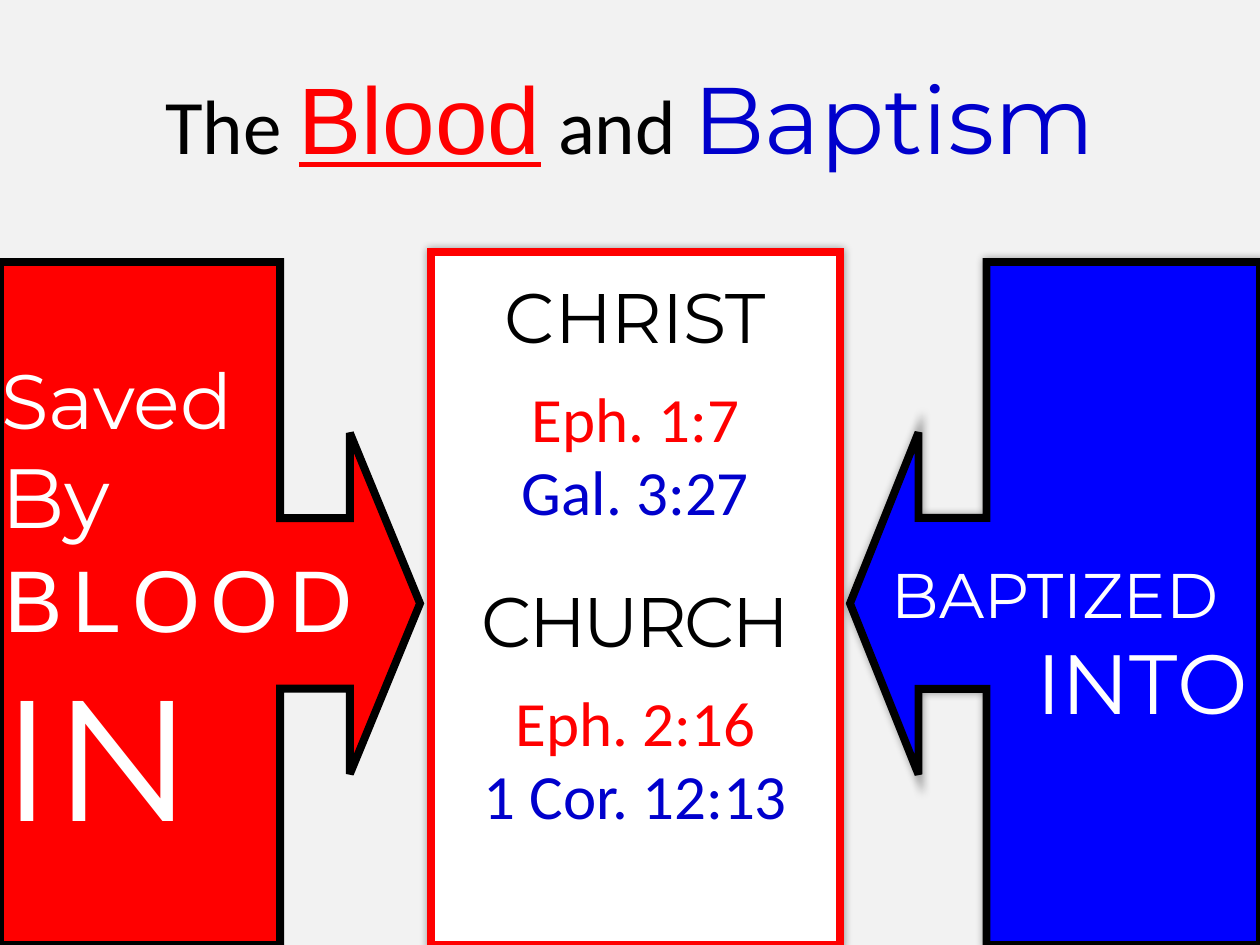
from lxml import etree
from pptx import Presentation
from pptx.dml.color import RGBColor
from pptx.enum.shapes import MSO_SHAPE as Shape
from pptx.enum.text import MSO_ANCHOR as Anchor, MSO_AUTO_SIZE as AutoSize, PP_ALIGN as Align
from pptx.oxml.ns import qn
from pptx.util import Pt

PX = 914400 / 126
COLORS = {
    "paper": "F2F2F2", "white": "FFFFFF", "black": "000000",
    "red": "FF0000", "blue": "0000FF", "navy": "0000CC",
}


def color(name):
    return RGBColor.from_string(COLORS[name])


def emu(*lengths):
    return [round(length * PX) for length in lengths]


def add_panel(shapes, kind, box, fill, line, adjustments=(), shadow=True):
    """A filled shape with a heavy mitred outline and an optional soft glow."""
    panel = shapes.add_shape(kind, *emu(*box))
    for index, value in enumerate(adjustments):
        panel.adjustments[index] = value
    panel.fill.solid()
    panel.fill.fore_color.rgb = color(fill)
    panel.line.color.rgb = color(line)
    panel.line.width = Pt(4.5)
    etree.SubElement(panel.line._get_or_add_ln(), qn("a:miter"), lim="800000")
    panel.shadow.inherit = False
    if shadow:
        effects = panel._element.spPr.find(qn("a:effectLst"))
        outer = etree.SubElement(effects, qn("a:outerShdw"), blurRad=str(Pt(5)),
                                 dist="0", dir="0", rotWithShape="0")
        tint = etree.SubElement(outer, qn("a:srgbClr"), val=COLORS["black"])
        etree.SubElement(tint, qn("a:alpha"), val="40000")


def add_text(shapes, box, paragraphs, anchor=Anchor.TOP, grow=True):
    """Paragraphs are (alignment, spans); a span is (text, size, font, color, extras)."""
    frame = shapes.add_textbox(*emu(*box)).text_frame
    frame.word_wrap = True
    frame.vertical_anchor = anchor
    frame.auto_size = AutoSize.SHAPE_TO_FIT_TEXT if grow else AutoSize.NONE
    for index, (alignment, spans) in enumerate(paragraphs):
        para = frame.add_paragraph() if index else frame.paragraphs[0]
        para.alignment = alignment
        for text, size, font, tone, *extras in spans:
            span = para.add_run()
            span.text = text
            span.font.size = Pt(size)
            span.font.name = font
            span.font.color.rgb = color(tone)
            for key, value in (extras[0] if extras else {}).items():
                span._r.get_or_add_rPr().set(key, value)


def add_title(page, box):
    add_text(page.shapes, box, [(Align.CENTER, [
        ("The ", 44, "Calibri", "black"),
        ("Blood", 54, "Arial", "red", {"u": "sng"}),
        (" and ", 44, "Calibri", "black"),
        ("Baptism", 54, "Montserrat", "navy"),
    ])], Anchor.MIDDLE, grow=False)


def add_baptism_arrow(page, left, top, width, height):
    shapes = page.shapes.add_group_shape().shapes
    add_panel(shapes, Shape.LEFT_ARROW_CALLOUT, (left, top, width, height),
              "blue", "black", (0.417, 0.417, 0.167, 0.667))
    add_text(shapes, (left, top + 287, width, 189), [
        (Align.CENTER, [("BAPTIZED", 36, "Montserrat", "white")]),
        (Align.RIGHT, [("INTO", 48, "Montserrat", "white")]),
    ])


def add_blood_arrow(page, left, top, width, height):
    shapes = page.shapes.add_group_shape().shapes
    add_panel(shapes, Shape.RIGHT_ARROW_CALLOUT, (left, top, width, height),
              "red", "black", (0.406, 0.406, 0.167, 0.667), shadow=False)
    add_text(shapes, (left - 11, top + 84, 379, 517), [
        (Align.LEFT, [("Saved", 44, "Montserrat", "white")]),
        (Align.LEFT, [("By", 48, "Montserrat", "white")]),
        (Align.CENTER, [("BLOOD", 50, "Arial", "white", {"spc": "600"})]),
        (Align.LEFT, [("IN", 98, "Montserrat", "white")]),
    ])


def add_center_panel(page, left, top, width, height):
    add_panel(page.shapes, Shape.RECTANGLE, (left, top, width, height), "white", "red")
    sections = [
        ("CHRIST", {}, "Eph. 1:7", "Gal. 3:27"),
        ("CHURCH", {"spc": "-150"}, "Eph. 2:16", "1 Cor. 12:13"),
    ]
    for index, (heading, extras, blood_verse, baptism_verse) in enumerate(sections):
        start = top + 15 + index * 304
        rows = [
            (0, 97, (heading, 40, "Montserrat", "black", extras)),
            (106, 89, (blood_verse, 36, "Calibri", "red")),
            (179, 89, (baptism_verse, 36, "Calibri", "navy")),
        ]
        for offset, row_height, span in rows:
            add_text(page.shapes, (left, start + offset, width, row_height),
                     [(Align.CENTER, [span])])


def main():
    deck = Presentation()
    deck.slide_width, deck.slide_height = emu(1260, 945)
    page = deck.slides.add_slide(deck.slide_layouts[6])
    page.background.fill.solid()
    page.background.fill.fore_color.rgb = color("paper")

    add_baptism_arrow(page, 850, 262, 410, 683)
    add_center_panel(page, 431, 252, 409, 693)
    add_title(page, (63, 38, 1134, 157))
    add_blood_arrow(page, 0, 262, 420, 683)
    deck.save("out.pptx")


if __name__ == "__main__":
    main()
